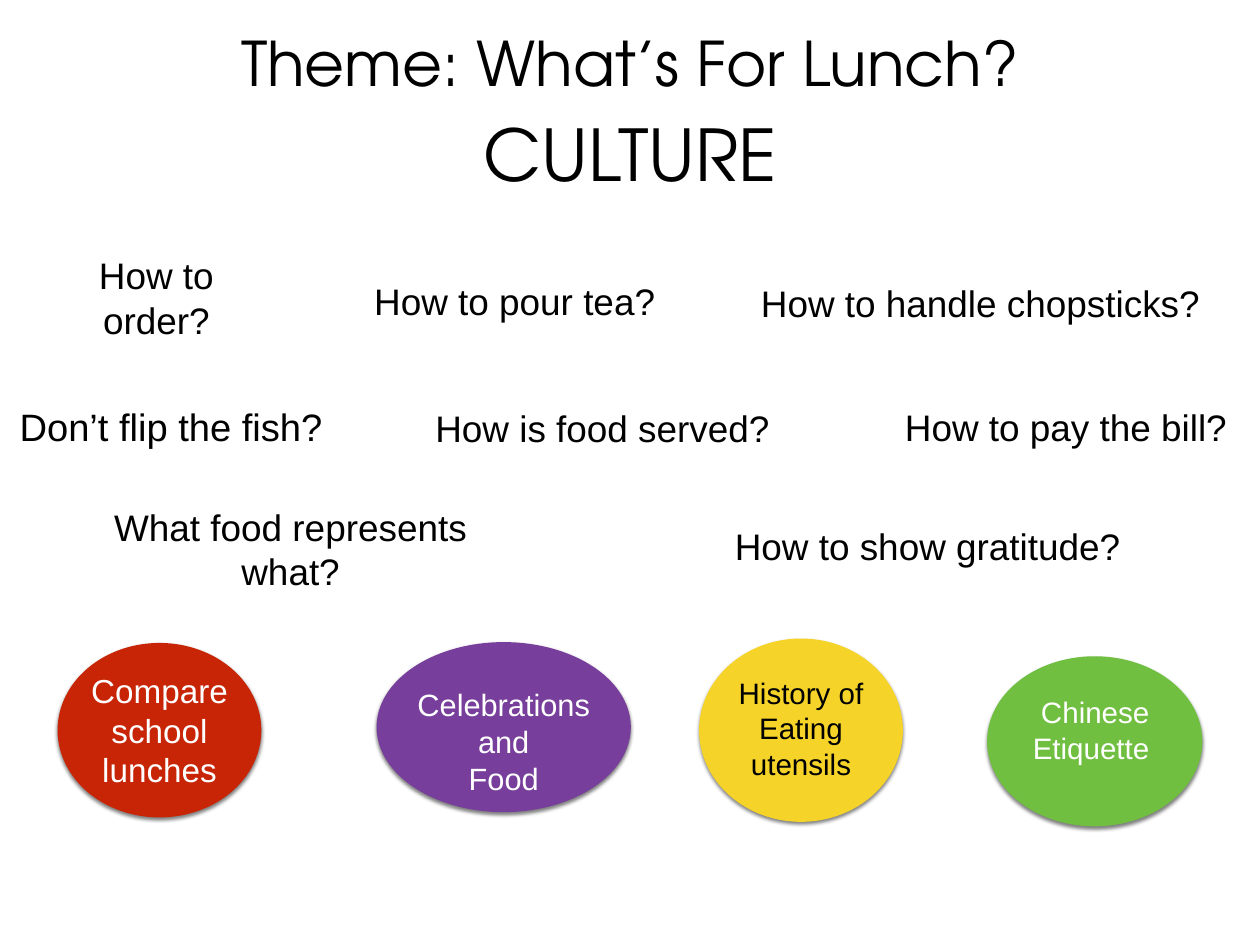
"""Build the lunch theme slide with its culture questions and topic ovals."""
from lxml.etree import SubElement
from pptx import Presentation
from pptx.dml.color import RGBColor
from pptx.enum.shapes import MSO_SHAPE
from pptx.enum.text import MSO_ANCHOR, MSO_AUTO_SIZE as AUTO, PP_ALIGN
from pptx.oxml.ns import qn
from pptx.util import Inches, Pt

BLACK = RGBColor(0x00, 0x00, 0x00)
WHITE = RGBColor(0xFF, 0xFF, 0xFF)
RED = RGBColor(0xC8, 0x25, 0x06)
PURPLE = RGBColor(0x77, 0x3F, 0x9B)
YELLOW = RGBColor(0xF5, 0xD3, 0x28)
GREEN = RGBColor(0x70, 0xBF, 0x41)
BODY_FONT = "Arial"
HEADING_FONT = "TeX Gyre Adventor"

TOPICS = [
    (RED, (0.65, 7.26, 2.3, 1.97), (0.89, 7.52, 1.82, 1.44),
     ["Compare", "school lunches"], 27, WHITE),
    (PURPLE, (4.25, 7.25, 2.87, 1.92), (4.53, 7.69, 2.31, 1.36),
     ["Celebrations and", "Food"], 25, WHITE),
    (YELLOW, (7.89, 7.21, 2.3, 2.07), (8.02, 7.56, 2.04, 1.32),
     ["History of", "Eating utensils"], 24, BLACK),
    (GREEN, (11.14, 7.41, 2.43, 1.92), (11.34, 7.78, 2.04, 0.92),
     ["Chinese Etiquette "], 24, WHITE),
]
QUESTIONS = [
    ("How to order?", (0.4, 3.05, 2.73, 0.61), 30),
    ("How to pour tea?", (4.16, 3.09, 3.3, 0.61), 30),
    ("How to handle chopsticks?", (8.49, 3.11, 5.15, 0.61), 30),
    ("Don’t flip the fish?", (0.16, 4.5, 3.54, 0.63), 31),
    ("How is food served?", (4.84, 4.52, 3.92, 0.61), 30),
    ("How to pay the bill?", (10.14, 4.51, 3.78, 0.61), 30),
    ("How to show gratitude?", (8.22, 5.86, 4.5, 0.61), 30),
]


def add_shadow(shape):
    """Give a shape a soft shadow straight below it."""
    shape.shadow.inherit = False
    effects = shape._element.spPr.find(qn("a:effectLst"))
    shadow = SubElement(effects, qn("a:outerShdw"), blurRad=str(Pt(3)),
                        dist=str(Pt(2)), dir="5400000", rotWithShape="0")
    color = SubElement(shadow, qn("a:srgbClr"), val=str(BLACK))
    SubElement(color, qn("a:alpha"), val="50000")


def add_oval(s, box, color):
    """Add a filled oval with a shadow and no outline."""
    sp = s.shapes.add_shape(MSO_SHAPE.OVAL, *map(Inches, box))
    sp.fill.solid()
    sp.fill.fore_color.rgb = color
    sp.line.fill.background()
    add_shadow(sp)


def add_text(s, box, lines, size, color=BLACK, font=BODY_FONT, wrap=True,
             auto_size=AUTO.SHAPE_TO_FIT_TEXT):
    """Add a centred text box with one paragraph per line."""
    tf = s.shapes.add_textbox(*map(Inches, box)).text_frame
    tf.word_wrap = wrap
    tf.auto_size = auto_size
    tf.vertical_anchor = MSO_ANCHOR.MIDDLE
    tf.margin_left = tf.margin_right = Inches(0.06)
    tf.margin_top = tf.margin_bottom = Inches(0.06)
    for i, line in enumerate(lines):
        p = tf.add_paragraph() if i else tf.paragraphs[0]
        p.alignment = PP_ALIGN.CENTER
        r = p.add_run()
        r.text = line
        r.font.name = font
        r.font.size = Pt(size)
        r.font.color.rgb = color


def main():
    """Create the slide and save it."""
    prs = Presentation()
    prs.slide_width, prs.slide_height = Inches(14.22), Inches(10.67)
    s = prs.slides.add_slide(prs.slide_layouts[6])
    for fill, oval, _, _, _, _ in TOPICS:
        add_oval(s, oval, fill)
    for _, _, box, lines, size, color in TOPICS:
        add_text(s, box, lines, size, color)
    for question, box, size in QUESTIONS:
        add_text(s, box, [question], size, wrap=False)
    add_text(s, (1.18, 5.65, 4.2, 1.1), ["What food represents what?"], 30)
    add_text(s, (4.7, 1.15, 4.83, 1.16), ["CULTURE"], 58, font=HEADING_FONT)
    add_text(s, (1.39, 0.1, 11.44, 1.19), ["Theme: What’s For Lunch?"], 50,
             font=HEADING_FONT, auto_size=AUTO.NONE)
    prs.save("out.pptx")


if __name__ == "__main__":
    main()
